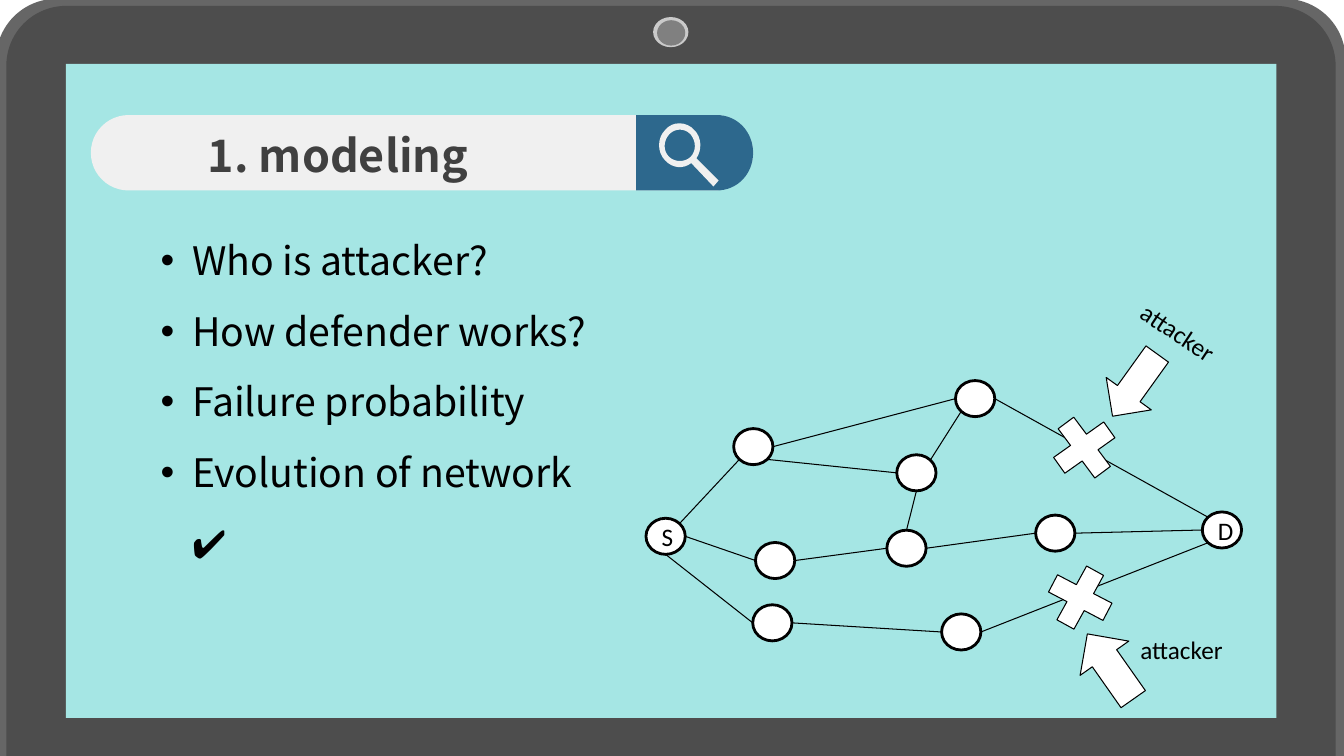
import math
from dataclasses import dataclass
from enum import Enum

import pptx
import pptx.dml.color
import pptx.enum.shapes
import pptx.enum.text
import pptx.oxml.ns
import pptx.util
from lxml import etree

Cm = pptx.util.Cm
Pt = pptx.util.Pt
Preset = pptx.enum.shapes.MSO_SHAPE
Anchor = pptx.enum.text.MSO_ANCHOR
Align = pptx.enum.text.PP_ALIGN
qualified = pptx.oxml.ns.qn
Point = tuple[float, float]

COLOURS = {
    "bezel_edge": "666666", "bezel": "4D4D4D", "screen": "A5E6E4",
    "camera": "CACACA", "lens": "808080", "search_bar": "F0F0F0",
    "button": "2D688D", "title": "404040", "ink": "000000", "white": "FFFFFF",
}
HEADING_FONT = "Noto Sans CJK SC"
LABEL_FONT = "Calibri"
NODE_WIDTH, NODE_HEIGHT = 0.99, 0.91
DIAGONAL = math.sqrt(0.5)
QUESTIONS = [
    "Who is attacker?",
    "How defender works?",
    "Failure probability",
    "Evolution of network ✔",
]


class Site(Enum):
    """Places on a node's rim, as multiples of its half width and half height."""
    TOP = (0, -1)
    LEFT = (-1, 0)
    BOTTOM = (0, 1)
    RIGHT = (1, 0)
    TOP_LEFT = (-DIAGONAL, -DIAGONAL)
    TOP_RIGHT = (DIAGONAL, -DIAGONAL)
    BOTTOM_LEFT = (-DIAGONAL, DIAGONAL)
    BOTTOM_RIGHT = (DIAGONAL, DIAGONAL)


@dataclass
class Block:
    preset: Preset
    left: float
    top: float
    width: float
    height: float
    fill: str = "white"
    line_width: float = 0
    rotation: float = 0
    corner: float | None = None


@dataclass
class Contour:
    """A closed outline; a segment has one point if straight, three if curved."""
    start: Point
    segments: list[tuple[Point, ...]]


@dataclass
class Node:
    left: float
    top: float
    label: str = ""

    def rim(self, site: Site) -> Point:
        across, down = site.value
        return (self.left + NODE_WIDTH / 2 * (1 + across),
                self.top + NODE_HEIGHT / 2 * (1 + down))


@dataclass
class Link:
    start: str
    start_site: Site
    end: str
    end_site: Site


@dataclass
class Label:
    left: float
    top: float
    rotation: float = 0


LAPTOP = [
    Block(Preset.ROUNDED_RECTANGLE, -0.1, -0.03, 34.01, 21.87, "bezel_edge", corner=0.07),
    Block(Preset.ROUNDED_RECTANGLE, 0.16, 0.15, 33.5, 21.51, "bezel", corner=0.07),
    Block(Preset.RECTANGLE, 1.66, 1.61, 30.51, 16.48, "screen"),
    Block(Preset.OVAL, 16.46, 0.43, 0.89, 0.76, "camera"),
    Block(Preset.OVAL, 16.56, 0.51, 0.71, 0.64, "lens"),
]
SEARCH_BAR = Block(Preset.ROUNDED_RECTANGLE, 2.29, 2.9, 16.69, 1.9, "search_bar", corner=0.5)
BUTTON = [Contour((18.06, 2.9), [
    ((16.03, 2.9),), ((16.03, 4.8),), ((18.06, 4.8),),
    ((18.59, 4.8), (18.98, 4.38), (18.98, 3.85)),
    ((18.98, 3.33), (18.59, 2.9), (18.06, 2.9)),
])]
MAGNIFIER = [
    Contour((17.5, 3.28), [
        ((17.3, 3.05), (16.94, 3.05), (16.76, 3.28)),
        ((16.56, 3.48), (16.56, 3.84), (16.76, 4.04)),
        ((16.94, 4.24), (17.22, 4.27), (17.42, 4.11)),
        ((17.98, 4.7),), ((18.11, 4.55),), ((17.55, 3.99),),
        ((17.7, 3.78), (17.68, 3.45), (17.5, 3.28)),
    ]),
    Contour((17.4, 3.96), [
        ((17.25, 4.09), (17.02, 4.09), (16.87, 3.96)),
        ((16.71, 3.81), (16.71, 3.56), (16.87, 3.38)),
        ((17.02, 3.23), (17.25, 3.23), (17.4, 3.38)),
        ((17.55, 3.56), (17.55, 3.81), (17.4, 3.96)),
    ]),
]
NODES = {
    "source": Node(16.28, 13.06, "S"),
    "upper_left": Node(18.49, 10.8),
    "middle_left": Node(19.04, 13.67),
    "lower_left": Node(18.97, 15.24),
    "destination": Node(30.3, 12.9, "D"),
    "upper_centre": Node(22.6, 11.46),
    "middle_right": Node(26.1, 12.98),
    "peak": Node(24.08, 9.59),
    "lower_right": Node(23.73, 15.47),
    "middle_centre": Node(22.35, 13.36),
}
LINKS = [
    Link("source", Site.TOP_RIGHT, "upper_left", Site.BOTTOM_LEFT),
    Link("source", Site.RIGHT, "middle_left", Site.LEFT),
    Link("source", Site.BOTTOM, "lower_left", Site.LEFT),
    Link("upper_left", Site.RIGHT, "peak", Site.LEFT),
    Link("upper_left", Site.BOTTOM_RIGHT, "upper_centre", Site.LEFT),
    Link("upper_centre", Site.TOP_RIGHT, "peak", Site.BOTTOM_LEFT),
    Link("middle_left", Site.RIGHT, "middle_centre", Site.LEFT),
    Link("upper_centre", Site.BOTTOM, "middle_centre", Site.TOP),
    Link("middle_centre", Site.RIGHT, "middle_right", Site.LEFT),
    Link("lower_left", Site.RIGHT, "lower_right", Site.LEFT),
    Link("lower_right", Site.RIGHT, "destination", Site.BOTTOM_LEFT),
    Link("peak", Site.RIGHT, "destination", Site.TOP_LEFT),
    Link("middle_right", Site.RIGHT, "destination", Site.LEFT),
]
ATTACKS = [
    Block(Preset.DOWN_ARROW, 27.9, 8.74, 1.4, 1.93, line_width=0.75, rotation=35.7),
    Block(Preset.DOWN_ARROW, 27.23, 15.79, 1.5, 2.01, line_width=0.75, rotation=144.9),
    Block(Preset.MATH_MULTIPLY, 26.26, 10.24, 2.13, 2.08, line_width=0.75, rotation=9),
    Block(Preset.MATH_MULTIPLY, 26.16, 14.02, 2.13, 2.08, line_width=0.75, rotation=343.2),
]
ATTACKER_LABELS = [Label(28.4, 7.87, 33.5), Label(28.49, 15.85)]


def colour(name: str) -> pptx.dml.color.RGBColor:
    return pptx.dml.color.RGBColor.from_string(COLOURS[name])


def paint(shape, fill: str, line_width: float = 0) -> None:
    shape.shadow.inherit = False
    shape.fill.solid()
    shape.fill.fore_color.rgb = colour(fill)
    if line_width:
        shape.line.color.rgb = colour("ink")
        shape.line.width = Pt(line_width)
    else:
        shape.line.fill.background()


def add_run(paragraph, text: str, font: str, size: float, ink: str = "ink",
            bold: bool = False) -> None:
    run = paragraph.add_run()
    run.text = text
    run.font.name = font
    run.font.size = Pt(size)
    run.font.bold = bold
    run.font.color.rgb = colour(ink)


def add_block(slide, block: Block):
    shape = slide.shapes.add_shape(block.preset, Cm(block.left), Cm(block.top),
                                   Cm(block.width), Cm(block.height))
    paint(shape, block.fill, block.line_width)
    shape.rotation = block.rotation
    if block.corner is not None:
        shape.adjustments[0] = block.corner
    return shape


def add_outline(slide, contours: list[Contour], fill: str) -> None:
    """Build the outline from straight steps, then join each three-point step into a curve."""
    builder = slide.shapes.build_freeform(*map(Cm, contours[0].start))
    for index, contour in enumerate(contours):
        if index:
            builder.move_to(*map(Cm, contour.start))
        builder.add_line_segments(
            [(Cm(x), Cm(y)) for segment in contour.segments for x, y in segment], close=True)
    shape = builder.convert_to_shape()
    paint(shape, fill)
    steps = iter(list(shape._element.iter(qualified("a:lnTo"))))
    for segment in (segment for contour in contours for segment in contour.segments):
        first, *others = [next(steps) for _ in segment]
        if others:
            first.tag = qualified("a:cubicBezTo")
            for step in others:
                first.append(step[0])
                step.getparent().remove(step)


def place_title(slide) -> None:
    title = slide.shapes.title
    slide.shapes._spTree.append(title._element)
    title.left, title.top, title.width, title.height = Cm(4.98), Cm(3.1), Cm(7.34), Cm(1.63)
    frame = title.text_frame
    frame.auto_size = pptx.enum.text.MSO_AUTO_SIZE.NONE
    frame.word_wrap = False
    frame.vertical_anchor = Anchor.TOP
    frame.paragraphs[0].alignment = Align.LEFT
    add_run(frame.paragraphs[0], "1. modeling", HEADING_FONT, 32, "title", bold=True)


def add_questions(slide) -> None:
    frame = slide.shapes.add_textbox(Cm(3.8), Cm(5.24), Cm(11.4), Cm(8.64)).text_frame
    frame.word_wrap = True
    for index, question in enumerate(QUESTIONS):
        paragraph = frame.add_paragraph() if index else frame.paragraphs[0]
        properties = paragraph._p.get_or_add_pPr()
        properties.set("marL", str(Cm(0.79)))
        properties.set("indent", str(-Cm(0.79)))
        for tag, key, value in (("a:buFont", "typeface", "Arial"), ("a:buChar", "char", "•")):
            etree.SubElement(properties, qualified(tag)).set(key, value)
        paragraph.line_spacing = 1.5
        add_run(paragraph, question, HEADING_FONT, 28)


def add_node(slide, node: Node) -> None:
    shape = add_block(slide, Block(Preset.OVAL, node.left, node.top,
                                   NODE_WIDTH, NODE_HEIGHT, line_width=2))
    if node.label:
        shape.text_frame.vertical_anchor = Anchor.MIDDLE
        paragraph = shape.text_frame.paragraphs[0]
        paragraph.alignment = Align.CENTER
        add_run(paragraph, node.label, LABEL_FONT, 18)


def add_link(slide, link: Link) -> None:
    ends = NODES[link.start].rim(link.start_site) + NODES[link.end].rim(link.end_site)
    connector = slide.shapes.add_connector(pptx.enum.shapes.MSO_CONNECTOR.STRAIGHT,
                                           *map(Cm, ends))
    connector.line.color.rgb = colour("ink")
    connector.line.width = Pt(0.75)
    etree.SubElement(connector._element.spPr, qualified("a:effectLst"))


def add_attacker_label(slide, label: Label) -> None:
    box = slide.shapes.add_textbox(Cm(label.left), Cm(label.top), Cm(2.62), Cm(1.02))
    box.rotation = label.rotation
    box.text_frame.word_wrap = False
    add_run(box.text_frame.paragraphs[0], "attacker", LABEL_FONT, 18)


def main() -> None:
    presentation = pptx.Presentation()
    presentation.slide_width, presentation.slide_height = Cm(33.87), Cm(19.05)
    slide = presentation.slides.add_slide(presentation.slide_layouts[5])
    for block in LAPTOP:
        add_block(slide, block)
    add_questions(slide)
    add_block(slide, SEARCH_BAR)
    add_outline(slide, BUTTON, "button")
    add_outline(slide, MAGNIFIER, "search_bar")
    place_title(slide)
    for node in NODES.values():
        add_node(slide, node)
    for link in LINKS:
        add_link(slide, link)
    for block in ATTACKS:
        add_block(slide, block)
    for label in ATTACKER_LABELS:
        add_attacker_label(slide, label)
    presentation.save("out.pptx")


if __name__ == "__main__":
    main()
